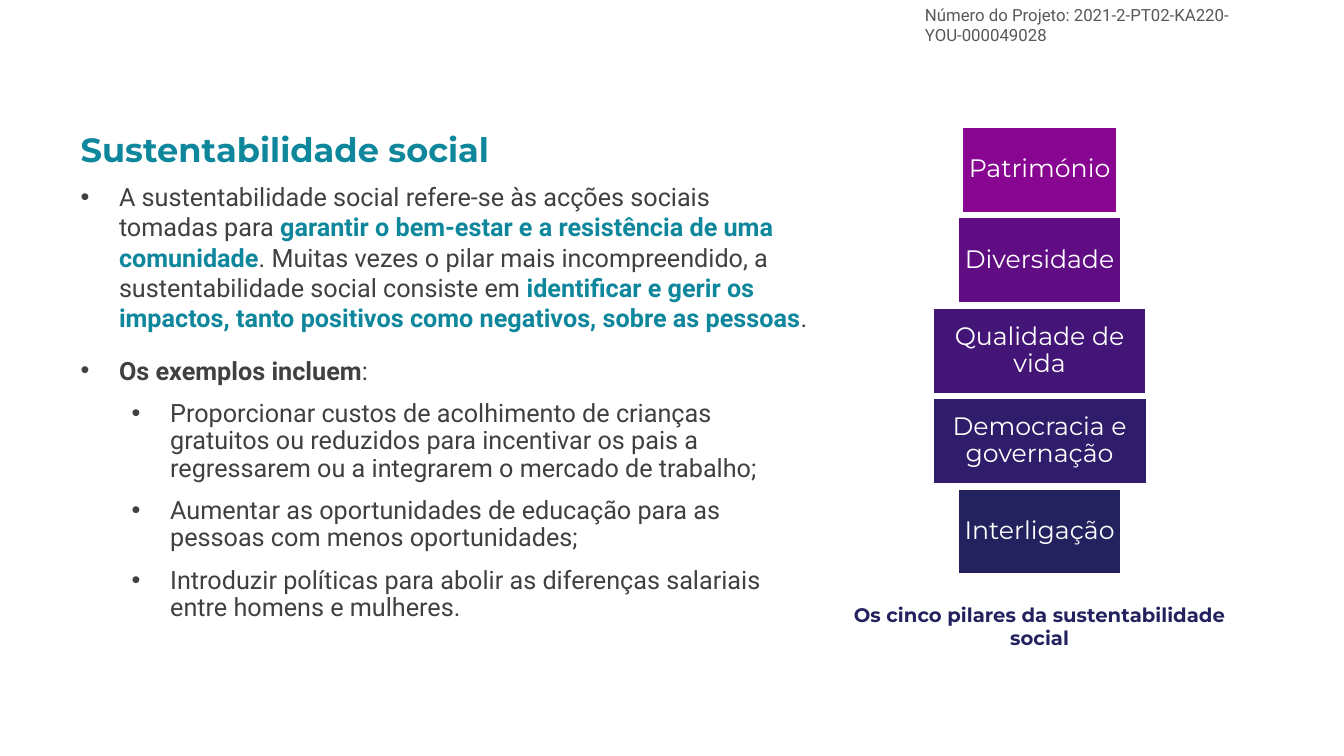
import pptx
import pptx.util
import pptx.dml.color
import pptx.enum.shapes
import pptx.enum.text
import lxml.etree
from pptx.oxml.ns import qn

Cm, Pt = pptx.util.Cm, pptx.util.Pt
ALIGN, ANCHOR = pptx.enum.text.PP_ALIGN, pptx.enum.text.MSO_ANCHOR

TEAL, NAVY, INK, GREY, WHITE = "0E879D", "23225E", "404040", "595959", "FFFFFF"
HEADING_FONT, BODY_FONT = "Montserrat", "Roboto"

PROJECT_NUMBER = "Número do Projeto: 2021-2-PT02-KA220-YOU-000049028"
TITLE = "Sustentabilidade social"
CAPTION = "Os cinco pilares da sustentabilidade social"

PLAIN = {"name": BODY_FONT, "size": Pt(18), "bold": False, "color": INK}
STRONG = {**PLAIN, "bold": True}
KEY = {**STRONG, "color": TEAL}

# Each point: outline level and its (text, format) runs
POINTS = [
    (0, [("A sustentabilidade social refere-se às acções sociais tomadas para ", PLAIN),
         ("garantir o bem-estar e a resistência de uma comunidade", KEY),
         (". Muitas vezes o pilar mais incompreendido, a sustentabilidade social consiste em ", PLAIN),
         ("identificar e gerir os impactos, tanto positivos como negativos, sobre as pessoas", KEY),
         (".", PLAIN)]),
    (0, [("Os exemplos incluem", STRONG), (":", PLAIN)]),
    (1, [("Proporcionar custos de acolhimento de crianças gratuitos ou reduzidos para "
          "incentivar os pais a regressarem ou a integrarem o mercado de trabalho;", PLAIN)]),
    (1, [("Aumentar as oportunidades de educação para as pessoas com menos oportunidades;", PLAIN)]),
    (1, [("Introduzir políticas para abolir as diferenças salariais entre homens e mulheres.", PLAIN)]),
]
LEVELS = [
    {"indent": 0.97, "spacing": {"space_before": Pt(10), "space_after": Pt(6), "line_spacing": 1.0}},
    {"indent": 2.26, "spacing": {"space_before": Pt(5), "space_after": Pt(6), "line_spacing": 0.9}},
]
HANGING = 0.97

# Each pillar: label, width in cm, fill
PILLARS = [
    ("Património", 3.89, "880592"),
    ("Diversidade", 4.11, "600D84"),
    ("Qualidade de vida", 5.36, "431577"),
    ("Democracia e governação", 5.38, "2F1C6A"),
    ("Interligação", 4.11, NAVY),
]


def rgb(hex_code):
    return pptx.dml.color.RGBColor.from_string(hex_code)


def apply(target, values):
    for attribute, value in values.items():
        setattr(target, attribute, value)


def add_run(paragraph, text, style):
    run = paragraph.add_run()
    run.text = text
    apply(run.font, {key: value for key, value in style.items() if key != "color"})
    run.font.color.rgb = rgb(style["color"])


def add_text_box(slide, box, **frame_values):
    frame = slide.shapes.add_textbox(*map(Cm, box)).text_frame
    apply(frame, {"word_wrap": True, **frame_values})
    return frame


def add_bullet(paragraph, indent):
    properties = paragraph._p.get_or_add_pPr()
    properties.set("marL", str(Cm(indent)))
    properties.set("indent", str(-Cm(HANGING)))
    font = lxml.etree.SubElement(properties, qn("a:buFont"))
    font.set("typeface", "Arial")
    bullet = lxml.etree.SubElement(properties, qn("a:buChar"))
    bullet.set("char", "•")


def project_number(slide, box):
    frame = add_text_box(slide, box, vertical_anchor=ANCHOR.MIDDLE)
    add_run(frame.paragraphs[0], PROJECT_NUMBER,
            {"name": BODY_FONT, "size": Pt(12), "color": GREY})


def title(slide, box):
    holder = slide.shapes.title
    apply(holder, dict(zip(("left", "top", "width", "height"), map(Cm, box))))
    apply(holder.text_frame, {"vertical_anchor": ANCHOR.TOP, "word_wrap": True,
                              "auto_size": pptx.enum.text.MSO_AUTO_SIZE.NONE})
    heading = holder.text_frame.paragraphs[0]
    apply(heading, {"alignment": ALIGN.LEFT, "line_spacing": 0.9, "space_before": Pt(0)})
    add_run(heading, TITLE,
            {"name": HEADING_FONT, "size": Pt(24), "bold": True, "color": TEAL})


def explanation(slide, box):
    frame = add_text_box(slide, box)
    for index, (level, runs) in enumerate(POINTS):
        point = frame.add_paragraph() if index else frame.paragraphs[0]
        point.level = level
        add_bullet(point, LEVELS[level]["indent"])
        apply(point, LEVELS[level]["spacing"])
        if index == 0:
            point.space_before = Pt(0)
        for text, style in runs:
            add_run(point, text, style)


def pillars(slide, box):
    """Stack the pillars centred in the box, with the caption below them."""
    left, top, width, height = box
    caption_height, caption_gap, gap = 1.3, 0.59, 0.13
    stack_height = height - caption_height - caption_gap
    pitch = (stack_height + gap) / len(PILLARS)
    for index, (label, pillar_width, fill) in enumerate(PILLARS):
        pillar = slide.shapes.add_shape(
            pptx.enum.shapes.MSO_SHAPE.RECTANGLE,
            Cm(left + (width - pillar_width) / 2), Cm(top + index * pitch),
            Cm(pillar_width), Cm(pitch - gap))
        pillar.shadow.inherit = False
        pillar.fill.solid()
        pillar.fill.fore_color.rgb = rgb(fill)
        pillar.line.color.rgb = rgb(WHITE)
        pillar.line.width = Pt(1)
        inset = Cm(0.12)
        apply(pillar.text_frame, {
            "word_wrap": True, "vertical_anchor": ANCHOR.MIDDLE, "margin_left": inset,
            "margin_right": inset, "margin_top": inset, "margin_bottom": inset})
        paragraph = pillar.text_frame.paragraphs[0]
        apply(paragraph, {"alignment": ALIGN.CENTER, "line_spacing": 0.9})
        add_run(paragraph, label, {"name": HEADING_FONT, "size": Pt(18), "color": WHITE})

    caption = add_text_box(
        slide, (left, top + height - caption_height, width, caption_height)).paragraphs[0]
    caption.alignment = ALIGN.CENTER
    add_run(caption, CAPTION,
            {"name": HEADING_FONT, "size": Pt(14), "bold": True, "color": NAVY})


def main():
    deck = pptx.Presentation()
    apply(deck, {"slide_width": Cm(33.87), "slide_height": Cm(19.05)})
    slide = deck.slides.add_slide(deck.slide_layouts.get_by_name("Title Only"))
    project_number(slide, (23.06, 0.0, 8.6, 1.25))
    title(slide, (1.78, 3.23, 16.69, 1.55))
    explanation(slide, (1.78, 4.45, 18.87, 11.6))
    pillars(slide, (20.88, 3.2, 10.64, 13.16))
    deck.save("out.pptx")


if __name__ == "__main__":
    main()
